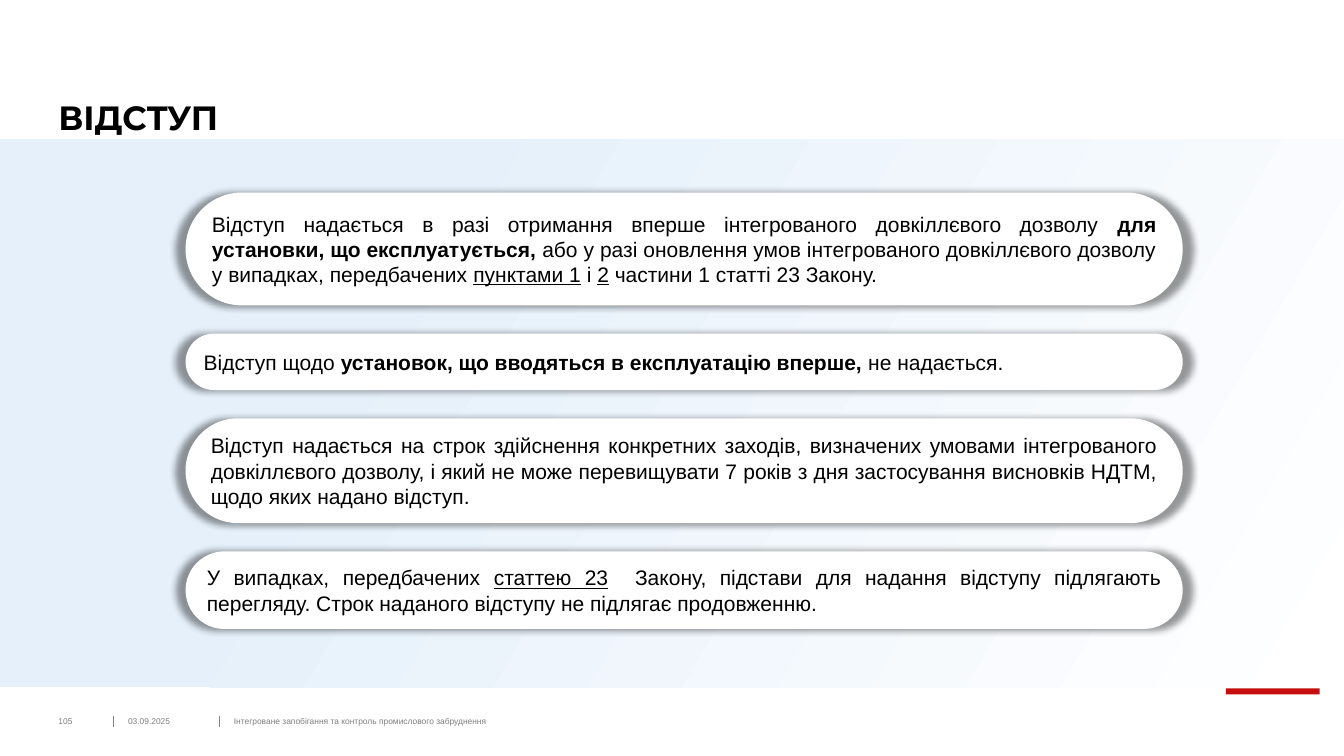
from dataclasses import dataclass

from lxml.etree import SubElement
from pptx import Presentation
from pptx.dml.color import RGBColor
from pptx.enum.shapes import MSO_CONNECTOR, MSO_SHAPE
from pptx.enum.text import MSO_ANCHOR, PP_ALIGN
from pptx.oxml.ns import qn
from pptx.util import Inches, Pt

BLACK = RGBColor(0x00, 0x00, 0x00)
WHITE = RGBColor(0xFF, 0xFF, 0xFF)
GREY = RGBColor(0x7F, 0x7F, 0x7F)
RED = RGBColor(0xC8, 0x0F, 0x0F)
PALE_BLUE = RGBColor(0xE5, 0xF0, 0xFA)

CARD_LEFT, CARD_TOP, CARD_WIDTH, CARD_GAP = 1.84, 1.91, 9.89, 0.28
FOOTER_TOP = 7.1


@dataclass
class Span:
    text: str
    bold: bool = False
    underline: bool = False


@dataclass
class Card:
    height: float
    spans: list[Span]


@dataclass
class Label:
    text: str
    left: float
    width: float


CARDS = [
    Card(1.12, [
        Span("Відступ надається в разі отримання вперше інтегрованого довкіллєвого дозволу "),
        Span("для установки, що експлуатується, ", bold=True),
        Span("або у разі оновлення умов інтегрованого довкіллєвого дозволу "
             "у випадках, передбачених "),
        Span("пунктами 1", underline=True),
        Span(" і "),
        Span("2", underline=True),
        Span(" частини 1 статті 23 Закону."),
    ]),
    Card(0.56, [
        Span("Відступ щодо "),
        Span("установок, що вводяться в експлуатацію вперше, ", bold=True),
        Span("не надається."),
    ]),
    Card(1.04, [
        Span("Відступ надається на строк здійснення конкретних заходів, визначених умовами "
             "інтегрованого довкіллєвого дозволу, і який не може перевищувати 7 років "
             "з дня застосування висновків НДТМ, щодо яких надано відступ."),
    ]),
    Card(0.77, [
        Span("У випадках, передбачених "),
        Span("статтею 23", underline=True),
        Span("  Закону, підстави для надання відступу підлягають перегляду. "
             "Строк наданого відступу не підлягає продовженню."),
    ]),
]

FOOTER = [
    Label("105", 0.58, 0.51),
    Label("03.09.2025", 1.27, 0.79),
    Label("Інтегроване запобігання та контроль промислового забруднення", 2.32, 7.48),
]
DIVIDERS = [1.13, 2.18]


def add_block(page, kind, left: float, top: float, width: float, height: float):
    box = page.shapes.add_shape(
        kind, Inches(left), Inches(top), Inches(width), Inches(height))
    box.shadow.inherit = False
    box.line.fill.background()
    return box


def add_label(page, label: Label, top: float, height: float, anchor,
              font_name: str, size: float, color: RGBColor):
    box = page.shapes.add_textbox(
        Inches(label.left), Inches(top), Inches(label.width), Inches(height))
    frame = box.text_frame
    frame.word_wrap = True
    frame.vertical_anchor = anchor
    frame.margin_left = frame.margin_right = frame.margin_top = frame.margin_bottom = 0
    para = frame.paragraphs[0]
    para.text = label.text
    para.font.name = font_name
    para.font.size = Pt(size)
    para.font.color.rgb = color
    return para


def add_glow_shadow(box) -> None:
    """Soft shadow, slightly larger than the shape on every side."""
    effects = box._element.spPr.find(qn("a:effectLst"))
    shadow = SubElement(effects, qn("a:outerShdw"), blurRad=str(Pt(5)),
                        sx="102000", sy="102000", algn="ctr", rotWithShape="0")
    color = SubElement(shadow, qn("a:srgbClr"), val=str(BLACK))
    SubElement(color, qn("a:alpha"), val="40000")


def add_card(page, card: Card, top: float) -> None:
    box = add_block(page, MSO_SHAPE.ROUNDED_RECTANGLE,
                    CARD_LEFT, top, CARD_WIDTH, card.height)
    box.adjustments[0] = 0.5
    box.fill.solid()
    box.fill.fore_color.rgb = WHITE
    add_glow_shadow(box)
    frame = box.text_frame
    frame.word_wrap = True
    frame.vertical_anchor = MSO_ANCHOR.MIDDLE
    para = frame.paragraphs[0]
    para.alignment = PP_ALIGN.JUSTIFY
    para.font.name = "Arial"
    para.font.size = Pt(15)
    para.font.color.rgb = BLACK
    for span in card.spans:
        run = para.add_run()
        run.text = span.text
        # Run colour overrides the white text of the shape style
        run.font.color.rgb = BLACK
        run.font.bold = span.bold
        run.font.underline = span.underline


def add_divider(page, left: float) -> None:
    line = page.shapes.add_connector(
        MSO_CONNECTOR.STRAIGHT, Inches(left), Inches(FOOTER_TOP),
        Inches(left), Inches(FOOTER_TOP + 0.11))
    line.line.color.rgb = GREY
    line.line.width = Pt(0.75)
    SubElement(line._element.spPr, qn("a:effectLst"))


def main() -> None:
    deck = Presentation()
    deck.slide_width, deck.slide_height = Inches(13.33), Inches(7.5)
    page = deck.slides.add_slide(deck.slide_layouts[6])

    # Background panel and red accent
    accent = add_block(page, MSO_SHAPE.RECTANGLE, 12.16, 6.83, 0.93, 0.06)
    accent.fill.solid()
    accent.fill.fore_color.rgb = RED
    panel = add_block(page, MSO_SHAPE.RECTANGLE, 0, 1.38, 13.33, 5.44)
    panel.fill.gradient()
    panel.fill.gradient_angle = 330
    for stop, position, color in zip(
            panel.fill.gradient_stops, (0.26, 1), (PALE_BLUE, WHITE)):
        stop.position = position
        stop.color.rgb = color

    # Title
    title = add_label(page, Label("ВІДСТУП", 0.58, 8.03), 0.4, 0.97,
                      MSO_ANCHOR.BOTTOM, "Montserrat", 24, BLACK)
    title.font.bold = True
    title.line_spacing = 0.9

    # Stacked cards
    top = CARD_TOP
    for card in CARDS:
        add_card(page, card, top)
        top += card.height + CARD_GAP

    # Footer
    for left in DIVIDERS:
        add_divider(page, left)
    for label in FOOTER:
        add_label(page, label, FOOTER_TOP, 0.1, MSO_ANCHOR.MIDDLE, "Arial", 6, GREY)

    deck.save("out.pptx")


if __name__ == "__main__":
    main()
